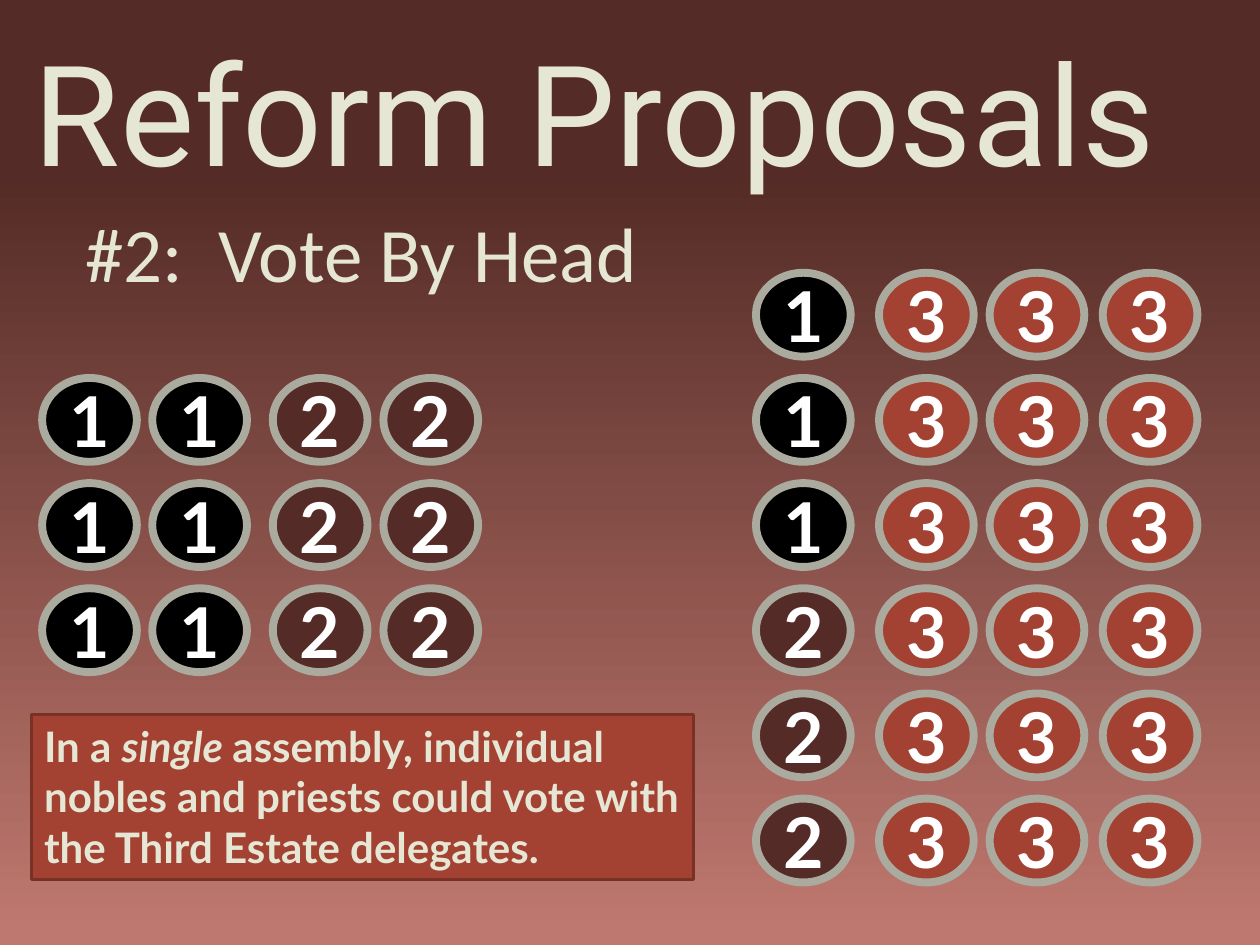
from pptx import Presentation
from pptx.dml.color import RGBColor
from pptx.enum.shapes import MSO_SHAPE as Shape
from pptx.enum.text import MSO_ANCHOR as Anchor, MSO_AUTO_SIZE as AutoSize, PP_ALIGN as Align
from pptx.util import Cm, Pt

TITLE = "Reform Proposals"
SUBTITLE = "#2:  Vote By Head"
NOTE = [
    ("In a ", False),
    ("single ", True),
    ("assembly, individual nobles and priests could vote with the Third Estate delegates.", False),
]
# Each column of delegates: left edge in cm, first grid row, estates from top to bottom
COLUMNS = [
    (0.85, 1, "111"),
    (3.07, 1, "111"),
    (5.5, 1, "222"),
    (7.73, 1, "222"),
    (15.24, 0, "111222"),
    (17.72, 0, "333333"),
    (19.95, 0, "333333"),
    (22.23, 0, "333333"),
]
GRID_TOP, ROW_STEP = 5.5, 2.12
DELEGATE_SIZE = (1.91, 1.69)

THEME = {
    "background": [(0.18, "542B26"), (0.99, "BF786F")],
    "estates": {"1": "000000", "2": "542B26", "3": "A34233"},
    "ring": ("AAAA9E", 4.5),
    "note_fill": "A34233",
    "note_line": ("793126", 2),
    "title": {"name": "Roboto", "size": 80, "color": "E6E6D5"},
    "subtitle": {"name": "Calibri", "size": 44, "color": "E6E6D5"},
    "delegate": {"name": "Lato", "size": 40, "color": "FFFFFF", "bold": True},
    "note": {"name": "Lato", "size": 24, "color": "E6E6D5", "bold": True},
}


def rgb(value):
    return RGBColor.from_string(value)


def add_run(paragraph, text, style, **extra):
    run = paragraph.add_run()
    run.text = text
    for name, value in {**style, **extra}.items():
        if name == "color":
            run.font.color.rgb = rgb(value)
        else:
            setattr(run.font, name, Pt(value) if name == "size" else value)


def format_frame(shape, align=Align.LEFT, **settings):
    """Apply the text frame settings and return the first paragraph."""
    frame = shape.text_frame
    for name, value in {"word_wrap": True, "auto_size": AutoSize.NONE, **settings}.items():
        setattr(frame, name, value)
    paragraph = frame.paragraphs[0]
    paragraph.alignment = align
    return paragraph


def add_filled_shape(slide, kind, box, fill, line):
    shape = slide.shapes.add_shape(kind, *map(Cm, box))
    shape.shadow.inherit = False
    shape.fill.solid()
    shape.fill.fore_color.rgb = rgb(fill)
    color, width = line
    shape.line.color.rgb = rgb(color)
    shape.line.width = Pt(width)
    return shape


def paint_background(slide):
    fill = slide.background.fill
    fill.gradient()
    fill.gradient_angle = 270
    for stop, (position, color) in zip(fill.gradient_stops, THEME["background"]):
        stop.position = position
        stop.color.rgb = rgb(color)


def add_headings(slide):
    title = slide.shapes.title
    title.left, title.top, title.width, title.height = map(Cm, (0.43, 0.64, 23.95, 3.18))
    add_run(format_frame(title, vertical_anchor=Anchor.MIDDLE), TITLE, THEME["title"])
    subtitle = slide.shapes.add_textbox(*map(Cm, (1.47, 4.01, 16.51, 2.11)))
    add_run(format_frame(subtitle), SUBTITLE, THEME["subtitle"])


def add_delegates(slide):
    for left, first_row, estates in COLUMNS:
        for row, estate in enumerate(estates, first_row):
            box = (left, GRID_TOP + row * ROW_STEP, *DELEGATE_SIZE)
            oval = add_filled_shape(slide, Shape.OVAL, box, THEME["estates"][estate], THEME["ring"])
            paragraph = format_frame(oval, Align.CENTER, vertical_anchor=Anchor.MIDDLE, word_wrap=False)
            add_run(paragraph, estate, THEME["delegate"])


def add_note(slide):
    box = (0.64, 14.4, 13.34, 3.33)
    note = add_filled_shape(slide, Shape.RECTANGLE, box, THEME["note_fill"], THEME["note_line"])
    paragraph = format_frame(note, vertical_anchor=Anchor.TOP, auto_size=AutoSize.SHAPE_TO_FIT_TEXT)
    for text, italic in NOTE:
        add_run(paragraph, text, THEME["note"], italic=italic)


def main():
    presentation = Presentation()
    presentation.slide_width, presentation.slide_height = Cm(25.4), Cm(19.05)
    title_only = presentation.slide_layouts[5]
    slide = presentation.slides.add_slide(title_only)
    paint_background(slide)
    add_headings(slide)
    add_delegates(slide)
    add_note(slide)
    presentation.save("out.pptx")


if __name__ == "__main__":
    main()
